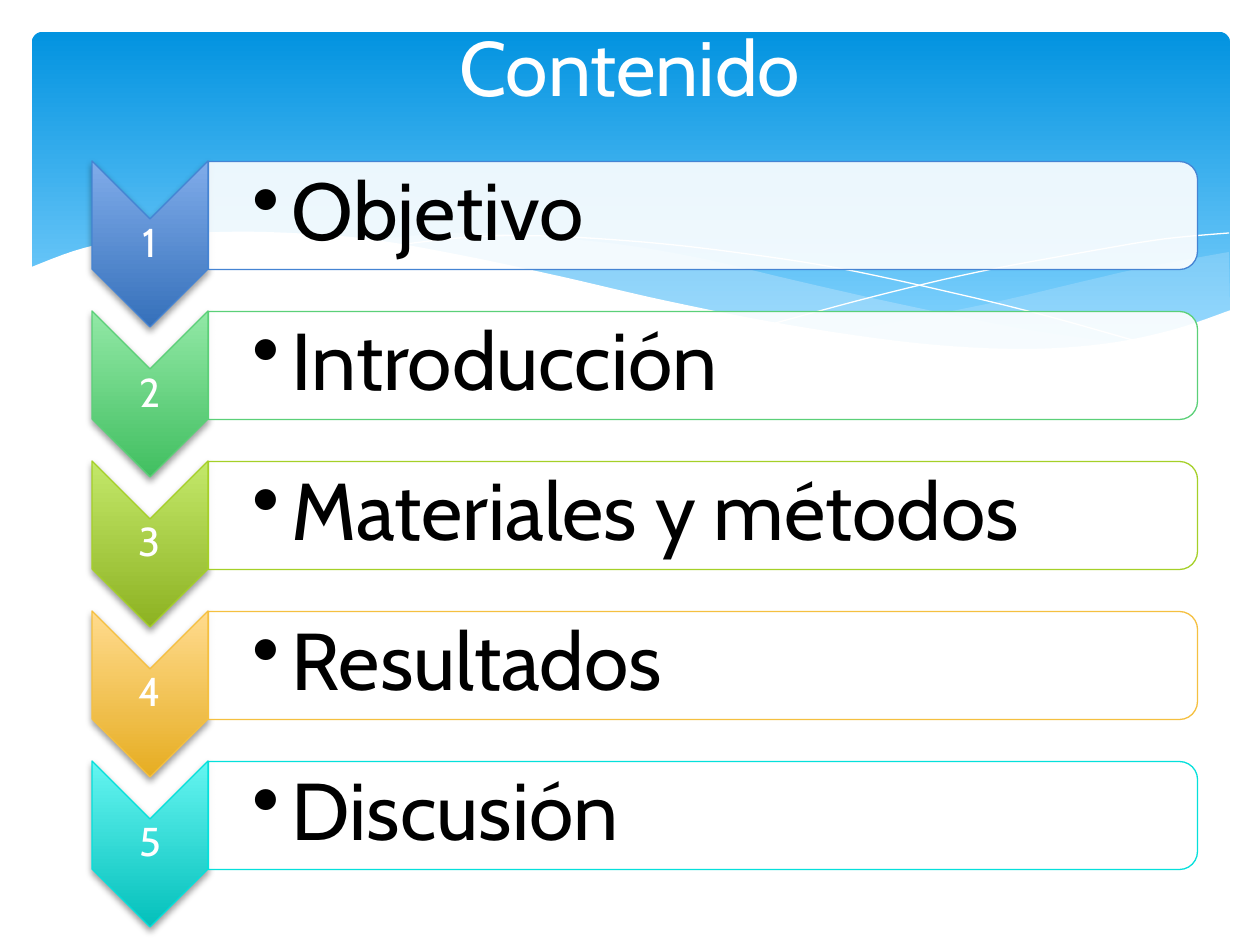
"""Builds a contents slide: a wave banner and five numbered chevron rows."""
from lxml import etree
from pptx import Presentation
from pptx import util as u
from pptx.dml.color import RGBColor
from pptx.enum import shapes, text
from pptx.oxml.ns import qn

SCALE = u.Inches(1) / 126
FONT = "Cabin"
WHITE = RGBColor(0xFF, 0xFF, 0xFF)
BLACK = RGBColor(0x00, 0x00, 0x00)
BANNER_TOP = RGBColor(0x02, 0x93, 0xE0)
BANNER_BOTTOM = RGBColor(0x83, 0xD3, 0xFE)
WAVE = RGBColor(0xC6, 0xE7, 0xFC)

ROW_PITCH = 150
ROWS = [
    ("Objetivo", RGBColor(0x80, 0xAC, 0xEA), RGBColor(0x35, 0x70, 0xBA), RGBColor(0x45, 0x84, 0xD3)),
    ("Introducción", RGBColor(0x92, 0xE8, 0xA6), RGBColor(0x41, 0xBF, 0x60), RGBColor(0x5B, 0xD0, 0x78)),
    ("Materiales y métodos", RGBColor(0xC3, 0xE8, 0x6A), RGBColor(0x8D, 0xB2, 0x22), RGBColor(0xA5, 0xD0, 0x28)),
    ("Resultados", RGBColor(0xFF, 0xDB, 0x8E), RGBColor(0xE6, 0xAD, 0x22), RGBColor(0xF5, 0xC0, 0x40)),
    ("Discusión", RGBColor(0x65, 0xF5, 0xF1), RGBColor(0x04, 0xC0, 0xBB), RGBColor(0x05, 0xE0, 0xDB)),
]

RIGHT_WAVE = [
    [(1229, 252), (1142, 268), (1085, 281), (982, 305), (833, 334)],
    [(833, 334), (906, 343), (969, 349), (1038, 349), (1099, 345), (1160, 334), (1230, 311)],
]
MIDDLE_WAVE = [
    [(1125, 344), (1017, 328), (890, 302), (793, 280), (699, 258), (616, 244), (529, 236),
     (455, 233), (360, 241)],
    [(360, 241), (456, 256), (566, 280), (668, 302), (779, 325), (876, 340), (959, 349),
     (1031, 350), (1125, 344)],
]
FALLING_LINE = [[(389, 246), (471, 237), (546, 236), (643, 242), (733, 252), (838, 268),
                 (958, 294), (1047, 316), (1143, 343)]]
RISING_LINE = [[(772, 324), (876, 296), (978, 272), (1091, 251), (1164, 239), (1229, 233)]]
WHITE_WAVE = [
    [(1231, 310), (1172, 330), (1103, 344), (1019, 349), (915, 343), (789, 325), (667, 301),
     (563, 277), (460, 255), (368, 239), (290, 233), (223, 232), (150, 236), (84, 248), (29, 268)],
    [(29, 415), (1231, 415)],
]


def px(length):
    return u.Emu(round(length * SCALE))


def smooth(points, steps=6):
    padded = [points[0], *points, points[-1]]
    curve = [points[0]]
    for a, b, c, d in zip(padded, padded[1:], padded[2:], padded[3:]):
        for step in range(1, steps + 1):
            t = step / steps
            curve.append(tuple(
                q + t / 2 * (r - p + t * (2 * p - 5 * q + 4 * r - s + t * (3 * (q - r) + s - p)))
                for p, q, r, s in zip(a, b, c, d)))
    return curve


def write(frame, content, size, color, align=text.PP_ALIGN.LEFT, spacing=None,
          left_inset=0, inset=0, hanging=0):
    frame.word_wrap = True
    frame.auto_size = text.MSO_AUTO_SIZE.NONE
    frame.vertical_anchor = text.MSO_ANCHOR.MIDDLE
    frame.margin_left = px(left_inset or inset)
    frame.margin_top = frame.margin_right = frame.margin_bottom = px(inset)
    paragraph = frame.paragraphs[0]
    paragraph.alignment = align
    paragraph.line_spacing = spacing
    run = paragraph.add_run()
    run.text = content
    run.font.name, run.font.size = FONT, u.Pt(size)
    run.font.color.rgb = color
    if hanging:
        properties = paragraph._p.get_or_add_pPr()
        properties.set("marL", str(px(hanging)))
        properties.set("indent", str(-px(hanging)))
        etree.SubElement(properties, qn("a:buChar"), char="•")


class SlideBuilder:
    def __init__(self, presentation):
        self.slide = presentation.slides.add_slide(presentation.slide_layouts[5])
        self.shapes = self.slide.shapes

    def paint(self, shape, fill=None, opacity=100, line=None, width=0.75):
        shape.shadow.inherit = False
        if fill is None:
            shape.fill.background()
        else:
            shape.fill.solid()
            shape.fill.fore_color.rgb = fill
            if opacity < 100:
                color = shape._element.spPr.find(f"{qn('a:solidFill')}/{qn('a:srgbClr')}")
                etree.SubElement(color, qn("a:alpha"), val=str(opacity * 1000))
        if line is None:
            shape.line.fill.background()
        else:
            shape.line.color.rgb = line
            shape.line.width = u.Pt(width)

    def shape(self, kind, box, rotation=0, **style):
        shape = self.shapes.add_shape(kind, *map(px, box))
        shape.rotation = rotation
        self.paint(shape, **style)
        return shape

    def gradient(self, shape, first, last, end=1):
        shape.fill.gradient()
        shape.fill.gradient_angle = 270
        for stop, color, position in zip(shape.fill.gradient_stops, (first, last), (0, end)):
            stop.color.rgb = color
            stop.position = position
        shape._element.spPr.find(qn("a:gradFill")).set("rotWithShape", "0")

    def drop_shadow(self, shape):
        effects = shape._element.spPr.find(qn("a:effectLst"))
        shadow = etree.SubElement(effects, qn("a:outerShdw"), blurRad=str(u.Pt(4)),
                                  dist=str(u.Pt(2)), dir="5400000", rotWithShape="0")
        color = etree.SubElement(shadow, qn("a:srgbClr"), val=str(BLACK))
        etree.SubElement(color, qn("a:alpha"), val="38000")

    def wave(self, curves, closed=True, **style):
        points = [(px(x), px(y)) for curve in curves for x, y in smooth(curve)]
        builder = self.shapes.build_freeform(*points[0])
        builder.add_line_segments(points[1:], close=closed)
        self.paint(builder.convert_to_shape(), **style)

    def title(self, content, box):
        title = self.shapes.title
        title.left, title.top, title.width, title.height = map(px, box)
        write(title.text_frame, content, 44, WHITE, align=text.PP_ALIGN.CENTER)
        self.shapes._spTree.append(title._element)

    def text(self, content, box, **style):
        write(self.shapes.add_textbox(*map(px, box)).text_frame, content, spacing=0.9, **style)

    def banner(self):
        panel = self.shape(shapes.MSO_SHAPE.ROUNDED_RECTANGLE, (32, 32, 1198, 340))
        panel.adjustments[0] = 0.03
        self.gradient(panel, BANNER_TOP, BANNER_BOTTOM, end=0.9)
        self.wave(RIGHT_WAVE, fill=WAVE, opacity=29)
        self.wave(MIDDLE_WAVE, fill=WAVE, opacity=40)
        for line in (FALLING_LINE, RISING_LINE):
            self.wave(line, closed=False, line=WHITE, width=0)
        self.wave(WHITE_WAVE, fill=WHITE)

    def row(self, index, content, light, dark, line):
        top = index * ROW_PITCH
        chevron = self.shape(shapes.MSO_SHAPE.CHEVRON, (67, top + 186, 166, 116), 90, line=line)
        self.gradient(chevron, light, dark)
        self.drop_shadow(chevron)
        self.text(str(index + 1), (92, top + 219, 116, 50), size=23, color=WHITE,
                  align=text.PP_ALIGN.CENTER, inset=3)
        self.shape(shapes.MSO_SHAPE.ROUND_2_SAME_RECTANGLE, (649, top - 279, 108, 989), 90,
                   fill=WHITE, opacity=90, line=line)
        self.text(content, (208, top + 166, 983, 97), size=46, color=BLACK,
                  left_inset=45, inset=4, hanging=39)


def main():
    presentation = Presentation()
    presentation.slide_width, presentation.slide_height = px(1260), px(945)
    builder = SlideBuilder(presentation)
    builder.banner()
    builder.title("Contenido", (63, -21, 1134, 173))
    for index, row in enumerate(ROWS):
        builder.row(index, *row)
    presentation.save("out.pptx")


if __name__ == "__main__":
    main()
